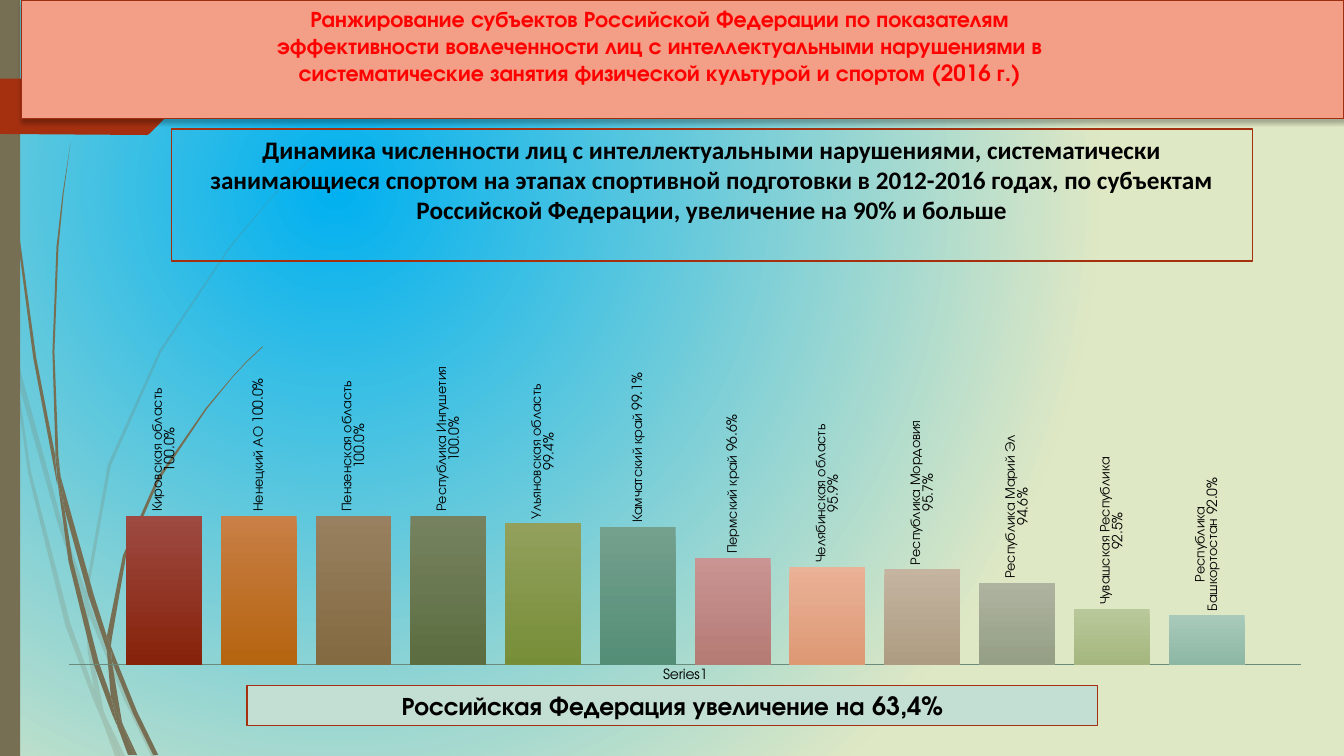
import pptx
import pptx.chart.data
import pptx.dml.color
import pptx.enum.chart
import pptx.enum.shapes
import pptx.enum.text
import pptx.oxml
import pptx.oxml.ns
import pptx.util

Inches = pptx.util.Inches
qn = pptx.oxml.ns.qn
A_NS = 'xmlns:a="http://schemas.openxmlformats.org/drawingml/2006/main"'
C_NS = 'xmlns:c="http://schemas.openxmlformats.org/drawingml/2006/chart"'

HEADING = ("Ранжирование субъектов Российской Федерации по показателям эффективности "
           "вовлеченности лиц с интеллектуальными нарушениями в систематические занятия "
           "физической культурой и спортом (2016 г.)")
SUBHEADING = ("Динамика численности лиц с интеллектуальными нарушениями, систематически "
              "занимающиеся спортом на этапах спортивной подготовки в 2012-2016 годах, "
              "по субъектам Российской Федерации, увеличение на 90% и больше")
TOTAL = "Российская Федерация увеличение на 63,4%"

# region, growth, colour at the top of the column, colour at its foot
REGIONS = [
    ("Кировская область", 1, "9E4A42", "86220A"),
    ("Ненецкий АО", 1, "C97F46", "B5640F"),
    ("Пензенская область", 1, "988060", "846A41"),
    ("Республика Ингушетия", 1, "76825F", "5C6D41"),
    ("Ульяновская область", 0.994, "92A05C", "778E38"),
    ("Камчатский край", 0.991, "74A08E", "548E77"),
    ("Пермский край", 0.966, "C99493", "B57B75"),
    ("Челябинская область", 0.959, "EAB297", "DD9874"),
    ("Республика Мордовия", 0.957, "C4B4A0", "AE9C82"),
    ("Республика Марий Эл", 0.946, "AEB39F", "959F85"),
    ("Чувашская Республика", 0.925, "B9C89A", "A5B77F"),
    ("Республика Башкортостан", 0.92, "A9CABB", "8DB7A5"),
]

COLORS = {"sky": "00B0F0", "sand": "DFE8C4", "stem": "766F54", "rust": "A53010",
          "header": "F39E87", "header_line": "9E2E0F", "heading": "FF0000",
          "total": "C3DED3", "text": "000000", "axis": "6A8A7C"}
FONTS = {"main": "TeX Gyre Adventor", "sub": "Calibri"}

# outlines of the grass stems, in inches
PALE_STEMS = [
    [(.11, 3.5), (.09, 3.22), (0, 2.82), (0, 2.99), (.1, 3.44)],
    [(.58, 5.22), (.84, 5.99), (.85, 5.86), (.62, 5.2), (.14, 3.45), (.17, 3.76)],
    [(.92, 6.07), (.88, 5.96), (.88, 6.1), (1.23, 6.94), (1.5, 7.5), (1.55, 7.5), (1.27, 6.92)],
    [(1.19, 7.5), (1.24, 7.5), (1.05, 7.11)],
    [(.93, 6.83), (.7, 6.19), (.31, 4.69), (.17, 3.76), (.11, 3.5), (.28, 4.7), (.65, 6.21),
     (.92, 6.93), (1.01, 7.14), (.99, 7.07)],
    [(.84, 5.99), (.87, 6.46), (.93, 6.83), (.96, 6.92), (1.05, 7.11), (1.03, 7.06),
     (.91, 6.46), (.88, 6.1), (.88, 6.08)],
    [(.88, 5.84), (1.1, 4.62), (1.6, 3.49), (2.29, 2.45), (2.68, 1.98), (2.9, 1.75),
     (3.12, 1.54), (3.12, 1.53), (2.89, 1.75), (2.68, 1.97), (2.28, 2.44), (1.58, 3.48),
     (1.07, 4.61), (.85, 5.84), (.85, 5.86), (.88, 5.96)],
    [(1.01, 7.14), (1.14, 7.5), (1.19, 7.5)],
    [(.88, 6.08), (.88, 6.1), (.88, 5.96), (.85, 5.86), (.84, 5.99)],
    [(.96, 6.92), (.93, 6.83), (.99, 7.07), (1.01, 7.14), (1.19, 7.5), (1.05, 7.11)],
]
DARK_STEMS = [
    [(.07, 1.1), (.17, 2.33), (.33, 3.55), (.56, 4.77), (.57, 4.81), (.55, 4.57), (.55, 4.53),
     (.36, 3.55), (.19, 2.32), (.08, 1.09), (.05, .48), (.04, 0), (.03, 0), (.04, .48)],
    [(.88, 5.92), (1.06, 6.45), (1.06, 6.31), (.93, 5.9), (.6, 4.72), (.64, 5.05)],
    [(1.13, 6.49), (1.1, 6.41), (1.11, 6.56), (1.32, 7.08), (1.52, 7.49), (1.57, 7.49),
     (1.36, 7.06)],
    [(1.1, 6.91), (.98, 6.57), (.72, 5.56), (.64, 5.05), (.57, 4.77), (.68, 5.57), (.93, 6.59),
     (1.11, 7.08), (1.17, 7.22), (1.16, 7.17)],
    [(.6, 4.72), (.58, 4.53), (.54, 3.49), (.58, 2.45), (.63, 1.93), (.7, 1.41), (.62, 1.93),
     (.56, 2.45), (.52, 3.49), (.55, 4.49)],
    [(1.33, 7.49), (1.36, 7.49), (1.22, 7.19)],
    [(.57, 4.77), (.64, 5.05), (.6, 4.72), (.55, 4.49), (.55, 4.53)],
    [(1.11, 6.33), (1.25, 5.52), (1.58, 4.76), (2.05, 4.06), (2.31, 3.74), (2.45, 3.59),
     (2.61, 3.44), (2.6, 3.44), (2.45, 3.58), (2.31, 3.73), (2.04, 4.05), (1.56, 4.74),
     (1.22, 5.51), (1.06, 6.31), (1.1, 6.41)],
    [(1.17, 7.22), (1.27, 7.49), (1.31, 7.49)],
    [(1.06, 6.45), (1.1, 6.91), (1.16, 7.06), (1.22, 7.19), (1.21, 7.16), (1.11, 6.56),
     (1.09, 6.51)],
    [(1.06, 6.45), (1.09, 6.51), (1.11, 6.56), (1.1, 6.41), (1.06, 6.31)],
    [(1.16, 7.06), (1.1, 6.91), (1.16, 7.17), (1.17, 7.22), (1.3, 7.49), (1.33, 7.49),
     (1.22, 7.19)],
]
TAB = [(0, .78), (1.46, .78), (1.48, .79), (1.73, 1.04), (1.74, 1.06), (1.73, 1.08),
       (1.48, 1.33), (1.46, 1.34), (0, 1.33)]


def rgb(key):
    return pptx.dml.color.RGBColor.from_string(COLORS.get(key, key))


def paint(shape, fill=None, line=None, opacity=100):
    shape.shadow.inherit = False
    if fill:
        shape.fill.solid()
        shape.fill.fore_color.rgb = rgb(fill)
        if opacity < 100:
            tint = shape.element.spPr.find(".//" + qn("a:srgbClr"))
            tint.append(pptx.oxml.parse_xml(f'<a:alpha {A_NS} val="{opacity * 1000}"/>'))
    else:
        shape.fill.background()
    if line:
        shape.line.color.rgb = rgb(line)
        shape.line.width = pptx.util.Pt(0.75)
    else:
        shape.line.fill.background()


def add_outline(points, fill, opacity=100):
    corners = [(Inches(x), Inches(y)) for x, y in points]
    builder = slide.shapes.build_freeform(*corners[0], scale=1.0)
    builder.add_line_segments(corners[1:], close=True)
    paint(builder.convert_to_shape(), fill, opacity=opacity)


def add_panel(left, top, width, height, **look):
    panel = slide.shapes.add_shape(pptx.enum.shapes.MSO_SHAPE.RECTANGLE, Inches(left),
                                   Inches(top), Inches(width), Inches(height))
    paint(panel, **look)
    return panel


def write(shape, text, size=18, font="main", color="text"):
    frame = shape.text_frame
    frame.word_wrap = True
    frame.auto_size = pptx.enum.text.MSO_AUTO_SIZE.NONE
    frame.vertical_anchor = pptx.enum.text.MSO_ANCHOR.TOP
    frame.text = text
    paragraph = frame.paragraphs[0]
    paragraph.alignment = pptx.enum.text.PP_ALIGN.CENTER
    style = paragraph.runs[0].font
    style.size, style.bold, style.name = pptx.util.Pt(size), True, FONTS[font]
    style.color.rgb = rgb(color)


def add_region_chart():
    data = pptx.chart.data.CategoryChartData(number_format="0.0%")
    data.categories = ["Series1"]
    for region, growth, *_ in REGIONS:
        data.add_series(region, [growth])
    chart = slide.shapes.add_chart(
        pptx.enum.chart.XL_CHART_TYPE.COLUMN_CLUSTERED, Inches(0.47), Inches(2.53),
        Inches(12.64), Inches(4.69), data).chart
    chart.has_legend = chart.has_title = False
    chart.font.size, chart.font.name = pptx.util.Pt(10), FONTS["main"]
    chart.font.color.rgb = rgb("text")
    growth_axis, region_axis = chart.value_axis, chart.category_axis
    growth_axis.minimum_scale, growth_axis.maximum_scale = 0.88, 1.02
    growth_axis.has_major_gridlines = growth_axis.visible = False
    region_axis.major_tick_mark = pptx.enum.chart.XL_TICK_MARK.NONE
    region_axis.format.line.color.rgb = rgb("axis")
    columns = chart.plots[0]
    columns.gap_width, columns.overlap, columns.vary_by_categories = 150, -25, False
    for series, (_, _, top, foot) in zip(columns.series, REGIONS):
        fill = series.format.fill
        fill.gradient()
        fill.gradient_angle = 270
        for stop, shade in zip(fill.gradient_stops, (top, foot)):
            stop.color.rgb = rgb(shade)
        labels = series.data_labels
        labels.show_value = labels.show_series_name = True
        labels.number_format, labels.number_format_is_linked = "0.0%", False
        labels.position = pptx.enum.chart.XL_LABEL_POSITION.OUTSIDE_END
        labels.font.size, labels.font.name = pptx.util.Pt(10), FONTS["main"]
        labels.font.color.rgb = rgb("text")
        label_xml = labels._element
        label_xml.find(".//" + qn("a:bodyPr")).set("rot", "-5400000")
        label_xml.find(qn("c:showBubbleSize")).addnext(
            pptx.oxml.parse_xml(f"<c:separator {C_NS}> </c:separator>"))
    plot_area = columns._element.getparent()
    for layout in plot_area.findall(qn("c:layout")):
        plot_area.remove(layout)
    sizes = "".join(f'<c:{tag} val="{value}"/>' for tag, value in (
        ("layoutTarget", "inner"), ("xMode", "edge"), ("yMode", "edge"),
        ("x", 0.017), ("y", 0.499), ("w", 0.967), ("h", 0.368)))
    plot_area.insert(0, pptx.oxml.parse_xml(
        f"<c:layout {C_NS}><c:manualLayout>{sizes}</c:manualLayout></c:layout>"))


deck = pptx.Presentation()
deck.slide_width, deck.slide_height = Inches(13.33), Inches(7.5)
slide = deck.slides.add_slide(deck.slide_layouts[5])

slide.background.fill.solid()
backdrop = slide.element.find(".//" + qn("p:bgPr")).find(qn("a:solidFill"))
backdrop.getparent().replace(backdrop, pptx.oxml.parse_xml(
    f'<a:gradFill {A_NS} rotWithShape="1"><a:gsLst>'
    f'<a:gs pos="0"><a:srgbClr val="{COLORS["sky"]}"/></a:gs>'
    f'<a:gs pos="100000"><a:srgbClr val="{COLORS["sand"]}"/></a:gs></a:gsLst>'
    '<a:path path="circle"><a:fillToRect l="50000" t="50000" r="100000" b="100000"/></a:path>'
    '</a:gradFill>'))

for stems, opacity in ((PALE_STEMS, 20), (DARK_STEMS, 100)):
    for stem in stems:
        add_outline(stem, "stem", opacity)
add_panel(0, 0, 0.2, 7.5, fill="stem")
add_outline(TAB, "rust")

header = add_panel(0.21, 0, 13.12, 1.18, fill="header", line="header_line")
header.element.spPr.find(qn("a:effectLst")).append(pptx.oxml.parse_xml(
    f'<a:outerShdw {A_NS} blurRad="38100" dist="25400" dir="5400000" rotWithShape="0">'
    '<a:srgbClr val="000000"><a:alpha val="25000"/></a:srgbClr></a:outerShdw>'))

heading = slide.shapes.title
heading.left, heading.top = Inches(2.59), Inches(0)
heading.width, heading.height = Inches(7.91), Inches(1.18)
write(heading, HEADING, size=16, color="heading")
header.element.addnext(heading.element)

add_region_chart()
write(add_panel(1.7, 1.28, 10.72, 1.31, line="rust"), SUBHEADING, font="sub")
write(add_panel(2.45, 6.8, 8.44, 0.4, fill="total", line="rust"), TOTAL)

deck.save("out.pptx")
